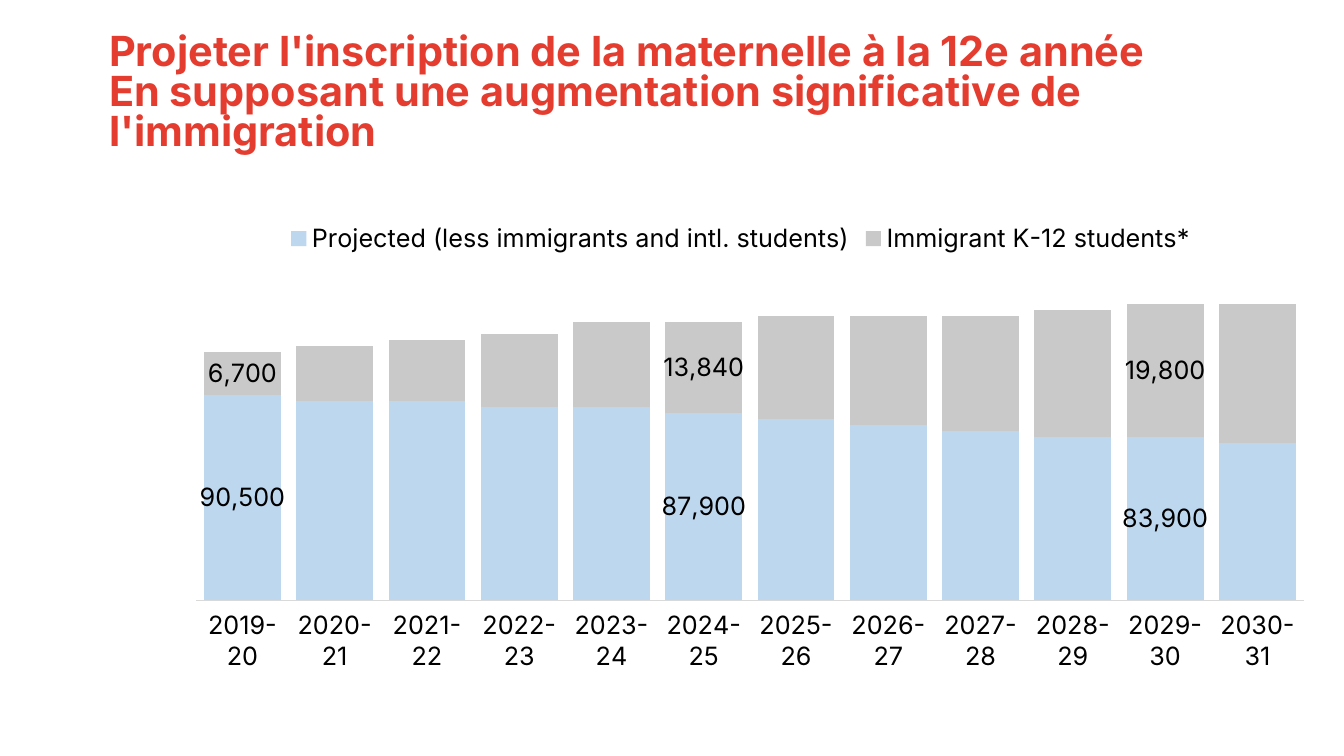
from dataclasses import dataclass

from lxml import etree
from pptx import Presentation
from pptx.chart.chart import Chart
from pptx.chart.data import CategoryChartData
from pptx.chart.series import BarSeries
from pptx.dml.color import RGBColor
from pptx.enum.chart import (XL_CHART_TYPE, XL_LABEL_POSITION,
                             XL_LEGEND_POSITION, XL_TICK_LABEL_POSITION,
                             XL_TICK_MARK)
from pptx.enum.text import MSO_ANCHOR, MSO_AUTO_SIZE, PP_ALIGN
from pptx.oxml.ns import qn
from pptx.slide import Slide
from pptx.util import Emu, Pt

STACKED = XL_CHART_TYPE.COLUMN_STACKED
CENTER = XL_LABEL_POSITION.CENTER
TOP_LEGEND = XL_LEGEND_POSITION.TOP
LOW = XL_TICK_LABEL_POSITION.LOW
NO_TICK = XL_TICK_MARK.NONE
LEFT = PP_ALIGN.LEFT
MIDDLE = MSO_ANCHOR.MIDDLE
NO_FIT = MSO_AUTO_SIZE.NONE

FACE = "Inter"
BLACK = "000000"
RED = "E43D30"
TITLE = ("Projeter l'inscription de la maternelle à la 12e année\n"
         "En supposant une augmentation significative de l'immigration")
YEARS = [f"{year}-{year - 1999}" for year in range(2019, 2031)]
PLOT = {"x": 0.04, "y": 0.098, "w": 0.936, "h": 0.657}


@dataclass
class Group:
    name: str
    color: str
    values: list[int]
    labels: dict[int, str]


GROUPS = [
    Group("Projected (less immigrants and intl. students)", "BDD7EE",
          [100, 99, 99, 98, 98, 97, 96, 95, 94, 93, 93, 92],
          {0: "90,500", 5: "87,900", 10: "83,900"}),
    Group("Immigrant K-12 students*", "C9C9C9",
          [7, 9, 10, 12, 14, 15, 17, 18, 19, 21, 22, 23],
          {0: "6,700", 5: "13,840", 10: "19,800"}),
]


def px(count: int) -> Emu:
    return Emu(round(count * 914400 / 100.8))


def rgb(code: str) -> RGBColor:
    return RGBColor.from_string(code)


def style(font, size: float, color: str, bold: bool = False) -> None:
    font.name = FACE
    font.size = Pt(size)
    font.bold = bold
    font.color.rgb = rgb(color)


def add_title(slide: Slide) -> None:
    title = slide.shapes.title
    title.left, title.top = px(99), px(29)
    title.width, title.height = px(1223), px(131)
    frame = title.text_frame
    frame.text = TITLE
    frame.word_wrap = True
    frame.auto_size = NO_FIT
    frame.vertical_anchor = MIDDLE
    for para in frame.paragraphs:
        para.alignment = LEFT
        para.line_spacing = 0.8
        for run in para.runs:
            style(run.font, 29.6, RED, True)


def set_plot(chart: Chart) -> None:
    """Fix the inner plot area as fractions of the chart."""
    area = chart._chartSpace.chart.plotArea
    for old in area.findall(qn("c:layout")):
        area.remove(old)
    layout = etree.Element(qn("c:layout"))
    manual = etree.SubElement(layout, qn("c:manualLayout"))
    parts = {"layoutTarget": "inner", "xMode": "edge", "yMode": "edge", **PLOT}
    for tag, value in parts.items():
        etree.SubElement(manual, qn(f"c:{tag}")).set("val", str(value))
    area.insert(0, layout)


def paint(series: BarSeries, group: Group) -> None:
    fill = series.format.fill
    fill.solid()
    fill.fore_color.rgb = rgb(group.color)
    series.invert_if_negative = False
    for index, text in group.labels.items():
        label = series.points[index].data_label
        frame = label.text_frame
        frame.text = text
        frame.word_wrap = False
        style(frame.paragraphs[0].runs[0].font, 18, BLACK)
        label.position = CENTER


def add_chart(slide: Slide) -> None:
    data = CategoryChartData()
    data.categories = YEARS
    for group in GROUPS:
        data.add_series(group.name, group.values)
    chart = slide.shapes.add_chart(STACKED, px(149), px(211), px(1183),
                                   px(516), data).chart
    style(chart.font, 18, BLACK)
    chart.has_title = False

    # Legend
    chart.has_legend = True
    chart.legend.position = TOP_LEGEND
    chart.legend.include_in_layout = False
    style(chart.legend.font, 18, BLACK)

    # Axes
    years = chart.category_axis
    years.major_tick_mark = years.minor_tick_mark = NO_TICK
    years.tick_label_position = LOW
    years.format.line.color.rgb = rgb("D9D9D9")
    years.format.line.width = Pt(0.75)
    style(years.tick_labels.font, 18, BLACK)
    scale = chart.value_axis
    scale.minimum_scale, scale.maximum_scale = 66, 122
    scale.has_major_gridlines = False
    scale.visible = False

    # Columns
    plot = chart.plots[0]
    plot.gap_width, plot.overlap = 20, 100
    plot.vary_by_categories = False
    for series, group in zip(plot.series, GROUPS):
        paint(series, group)
    set_plot(chart)


def main() -> None:
    deck = Presentation()
    deck.slide_width, deck.slide_height = px(1344), px(756)
    slide = deck.slides.add_slide(deck.slide_layouts[5])
    add_title(slide)
    add_chart(slide)
    deck.save("out.pptx")


if __name__ == "__main__":
    main()
